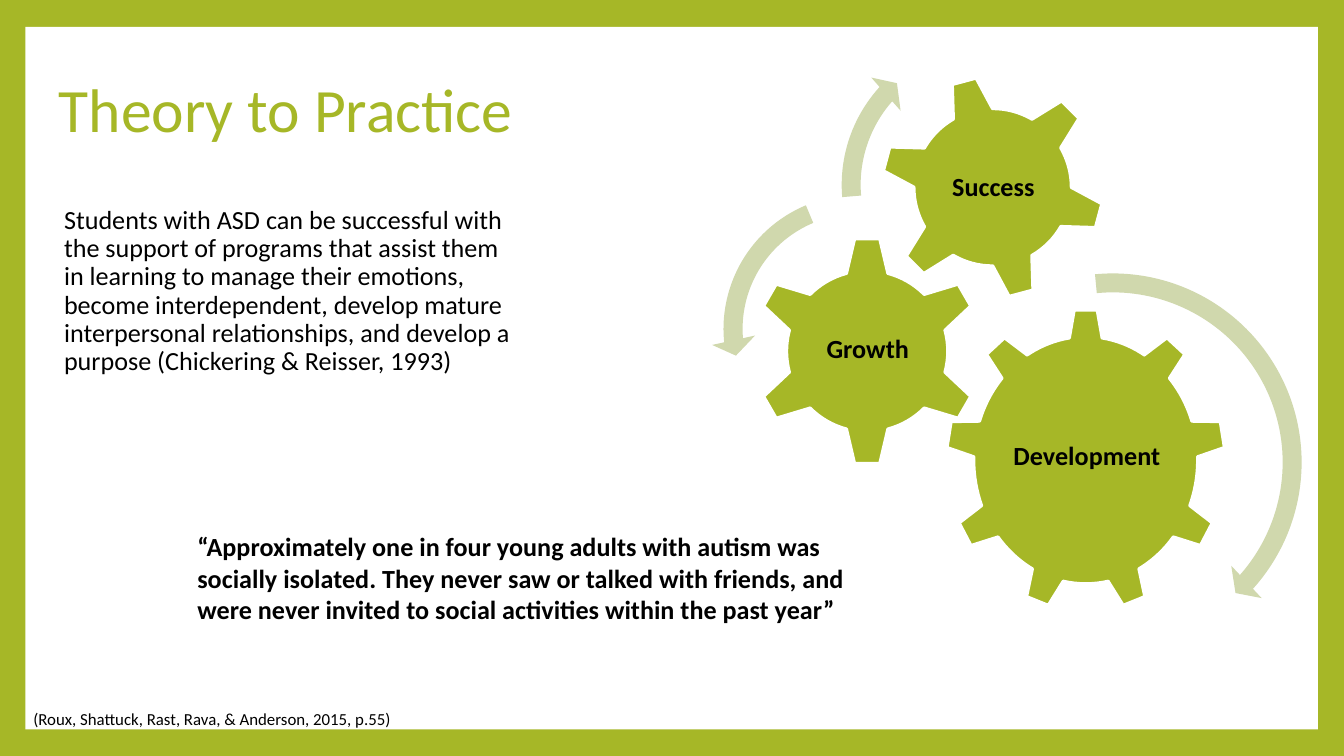
from lxml import etree
from pptx import Presentation
from pptx.dml.color import RGBColor
from pptx.enum.shapes import MSO_SHAPE
from pptx.enum.text import MSO_ANCHOR, MSO_AUTO_SIZE, PP_ALIGN
from pptx.oxml.ns import qn
from pptx.util import Cm, Pt

RECTANGLE = MSO_SHAPE.RECTANGLE
GEAR_6, GEAR_9 = MSO_SHAPE.GEAR_6, MSO_SHAPE.GEAR_9
ARROW, LEFT_ARROW = MSO_SHAPE.CIRCULAR_ARROW, MSO_SHAPE.LEFT_CIRCULAR_ARROW
TOP, MIDDLE = MSO_ANCHOR.TOP, MSO_ANCHOR.MIDDLE
LEFT, CENTER = PP_ALIGN.LEFT, PP_ALIGN.CENTER
NO_AUTOFIT = MSO_AUTO_SIZE.NONE
GREEN, PALE_GREEN, WHITE, BLACK = "A6B727", "D0D8AD", "FFFFFF", "000000"


def color(hex_string):
    return RGBColor.from_string(hex_string)


def write(shape, box, text, size, hex_string=BLACK, bold=False, align=LEFT,
          anchor=TOP, spacing=0.9, insets=(0.25, 0.25)):
    """Place a text shape and fill it with one formatted paragraph."""
    shape.left, shape.top, shape.width, shape.height = [Cm(v) for v in box]
    frame = shape.text_frame
    frame.word_wrap = True
    frame.auto_size = NO_AUTOFIT
    frame.vertical_anchor = anchor
    frame.margin_left = frame.margin_right = Cm(insets[0])
    frame.margin_top = frame.margin_bottom = Cm(insets[1])
    paragraph = frame.paragraphs[0]
    paragraph.alignment = align
    paragraph.line_spacing = spacing
    paragraph.space_before = Pt(0)
    run = paragraph.add_run()
    run.text = text
    run.font.name = "Calibri"
    run.font.size = Pt(size)
    run.font.bold = bold
    run.font.color.rgb = color(hex_string)
    return paragraph


presentation = Presentation()
presentation.slide_width = Cm(25.4)
presentation.slide_height = Cm(14.29)
slide = presentation.slides.add_slide(presentation.slide_layouts[1])
shapes = slide.shapes
title, body = shapes.title, slide.placeholders[1]

# Green frame around a white panel, behind the placeholders
slide.background.fill.solid()
slide.background.fill.fore_color.rgb = color(GREEN)
panel = shapes.add_shape(RECTANGLE, Cm(0.48), Cm(0.51), Cm(24.43), Cm(13.28))
panel.shadow.inherit = False
panel.fill.solid()
panel.fill.fore_color.rgb = color(WHITE)
panel.line.fill.background()
title._element.addprevious(panel._element)

# Title and body
write(title, (0.86, 1.24, 23.67, 1.6), "Theory to Practice", 33, GREEN)
paragraph = write(
    body, (0.86, 3.66, 9.12, 4.57),
    "Students with ASD can be successful with the support of programs that "
    "assist them in learning to manage their emotions, become interdependent, "
    "develop mature interpersonal relationships, and develop a purpose "
    "(Chickering & Reisser, 1993)", 14)
properties = paragraph._p.get_or_add_pPr()
properties.set("marL", str(Cm(0.1)))
properties.set("indent", "0")
etree.SubElement(properties, qn("a:buNone"))

# Quotation
write(shapes.add_textbox(0, 0, 0, 0), (3.48, 9.78, 13.72, 2.36),
      "“Approximately one in four young adults with autism was socially "
      "isolated. They never saw or talked with friends, and were never invited "
      "to social activities within the past year”", 14, bold=True, spacing=1)

# Gears with upright labels
gears = [
    ("Development", GEAR_9, (17.88, 5.84, 5.28, 5.72), 0, (18.95, 7.14, 3.18, 3)),
    ("Growth", GEAR_6, (14.22, 4.47, 4.34, 4.34), 0, (15.32, 5.56, 2.16, 2.13)),
    ("Success", GEAR_6, (16.64, 1.42, 4.24, 4.24), 345, (17.58, 2.36, 2.39, 2.39)),
]
for label, kind, gear_box, rotation, label_box in gears:
    gear = shapes.add_shape(kind, *[Cm(v) for v in gear_box])
    gear.rotation = rotation
    gear.shadow.inherit = False
    gear.fill.solid()
    gear.fill.fore_color.rgb = color(GREEN)
    gear.line.color.rgb = color(WHITE)
    gear.line.width = Pt(1.5)
    write(shapes.add_textbox(0, 0, 0, 0), label_box, label, 14, bold=True,
          align=CENTER, anchor=MIDDLE, insets=(0.05, 0.05))

# Turning arrows: left, top, diameter, adjustments
arrows = [
    (ARROW, 17.22, 4.93, 7.62, (0.047, 2.99, 25.088, 158.772, 0.055)),
    (LEFT_ARROW, 13.44, 3.45, 5.54, (0.065, 4.3, 104.891, 148.378, 0.075)),
    (ARROW, 15.67, 0.51, 5.97, (0.06, 3.941, 133.138, 105.082, 0.07)),
]
for kind, left, top, diameter, adjustments in arrows:
    arrow = shapes.add_shape(kind, Cm(left), Cm(top), Cm(diameter), Cm(diameter))
    for index, value in enumerate(adjustments):
        arrow.adjustments[index] = value
    arrow.shadow.inherit = False
    arrow.fill.solid()
    arrow.fill.fore_color.rgb = color(PALE_GREEN)
    arrow.line.fill.background()

# Citation
write(shapes.add_textbox(0, 0, 0, 0), (0.38, 13.26, 11.07, 1.02),
      "(Roux, Shattuck, Rast, Rava, & Anderson, 2015, p.55)", 9,
      spacing=1, insets=(0.25, 0.13))

presentation.save("out.pptx")
